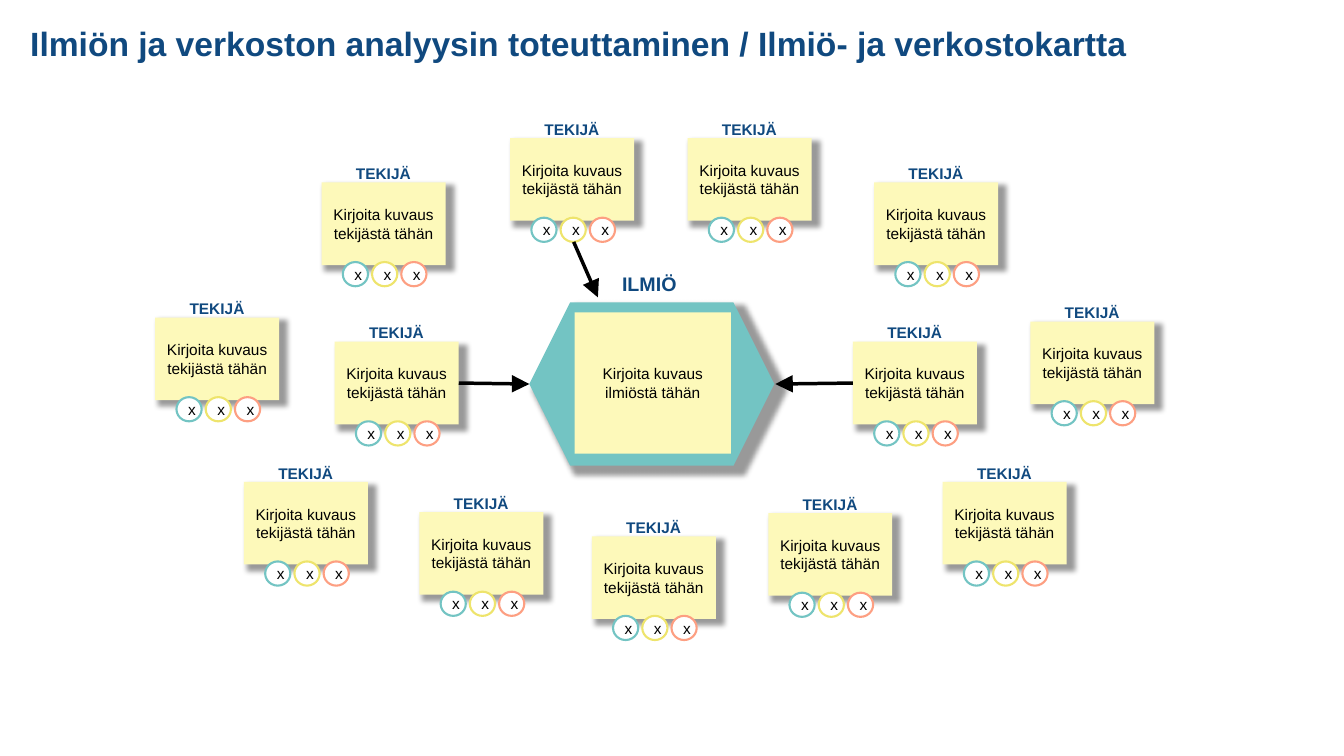
from lxml.etree import SubElement
from pptx import Presentation
from pptx.dml.color import RGBColor
from pptx.enum.shapes import MSO_CONNECTOR, MSO_SHAPE
from pptx.enum.text import MSO_ANCHOR, MSO_AUTO_SIZE, PP_ALIGN
from pptx.oxml import parse_xml
from pptx.oxml.ns import nsdecls, qn
from pptx.util import Inches, Pt

NAVY = RGBColor(0x10, 0x49, 0x7F)
TEAL = RGBColor(0x73, 0xC4, 0xC3)
YELLOW = RGBColor(0xEE, 0xE4, 0x6C)
CORAL = RGBColor(0xFD, 0x9F, 0x82)
NOTE = RGBColor(0xFD, 0xF9, 0xBA)
WHITE = RGBColor(0xFF, 0xFF, 0xFF)
BLACK = RGBColor(0, 0, 0)

SHADOW = (
    f'<a:effectLst {nsdecls("a")}>'
    f'<a:outerShdw blurRad="{Pt(4)}" dist="{Pt(3)}" dir="2700000" '
    'sx="104000" sy="104000" algn="tl" rotWithShape="0">'
    '<a:srgbClr val="000000"><a:alpha val="40000"/></a:srgbClr>'
    '</a:outerShdw></a:effectLst>'
)


def add_text(text, shapes, box, size=11, color=BLACK, bold=False,
             kind=None, fill=None, outline=None, shadow=False):
    place = [Inches(value) for value in box]
    if kind is None:
        item = shapes.add_textbox(*place)
        frame = item.text_frame
        frame.margin_left = frame.margin_right = 0
        frame.margin_top = frame.margin_bottom = 0
        frame.word_wrap = False
        frame.auto_size = MSO_AUTO_SIZE.SHAPE_TO_FIT_TEXT
    else:
        item = shapes.add_shape(kind, *place)
        item.fill.solid()
        item.fill.fore_color.rgb = fill
        if outline is None:
            item.line.fill.background()
        else:
            item.line.color.rgb = outline
            item.line.width = Pt(1.5)
        if shadow:
            item._element.spPr.append(parse_xml(SHADOW))
        else:
            item.shadow.inherit = False
        frame = item.text_frame
        frame.word_wrap = True
        frame.vertical_anchor = MSO_ANCHOR.MIDDLE
        frame.paragraphs[0].alignment = PP_ALIGN.CENTER
    if text:
        run = frame.paragraphs[0].add_run()
        run.text = text
        run.font.name = "Arial"
        run.font.size = Pt(size)
        run.font.bold = bold
        run.font.color.rgb = color


def add_arrow(shapes, start, end):
    arrow = shapes.add_connector(
        MSO_CONNECTOR.STRAIGHT, *[Inches(value) for value in start + end])
    arrow.line.color.rgb = BLACK
    arrow.line.width = Pt(2.5)
    SubElement(arrow.line._get_or_add_ln(), qn("a:tailEnd"),
               type="triangle", w="lg", len="lg")
    SubElement(arrow._element.spPr, qn("a:effectLst"))


presentation = Presentation()
presentation.slide_width = Inches(13.33)
presentation.slide_height = Inches(7.5)
slide = presentation.slides.add_slide(presentation.slide_layouts[6])

phenomenon = slide.shapes.add_group_shape().shapes
add_text("", phenomenon, (5.25, 3, 2.43, 1.62),
         kind=MSO_SHAPE.HEXAGON, fill=TEAL, shadow=True)
add_text("Kirjoita kuvaus ilmiöstä tähän", phenomenon, (5.7, 3.1, 1.55, 1.4),
         kind=MSO_SHAPE.RECTANGLE, fill=NOTE)
add_text("ILMIÖ", phenomenon, (6.17, 2.7, 0.6, 0.24),
         size=14, color=NAVY, bold=True)

actor_positions = [
    (8.46, 3.39), (3.32, 3.39), (5.06, 1.37), (6.82, 1.37), (8.67, 1.81),
    (9.35, 4.78), (7.62, 5.09), (5.87, 5.32), (4.16, 5.08), (2.42, 4.78),
    (3.19, 1.81), (1.54, 3.15), (10.22, 3.19),
]
for left, top in actor_positions:
    actor = slide.shapes.add_group_shape().shapes
    add_text("Kirjoita kuvaus tekijästä tähän", actor, (left, top, 1.23, 0.82),
             kind=MSO_SHAPE.RECTANGLE, fill=NOTE, shadow=True)
    for index, ring in enumerate((TEAL, YELLOW, CORAL)):
        add_text("x", actor, (left + 0.21 + 0.29 * index, top + 0.79, 0.25, 0.24),
                 kind=MSO_SHAPE.OVAL, fill=WHITE, outline=ring)
    add_text("TEKIJÄ", actor, (left + 0.34, top - 0.18, 0.58, 0.19),
             color=NAVY, bold=True)

for start, end in [((8.46, 3.8), (7.69, 3.81)),
                   ((4.55, 3.8), (5.25, 3.81)),
                   ((5.69, 2.4), (5.93, 2.95))]:
    add_arrow(slide.shapes, start, end)

add_text("Ilmiön ja verkoston analyysin toteuttaminen / Ilmiö- ja verkostokartta",
         slide.shapes, (0.3, 0.23, 10.97, 0.4), size=24, color=NAVY, bold=True)

presentation.save("out.pptx")
